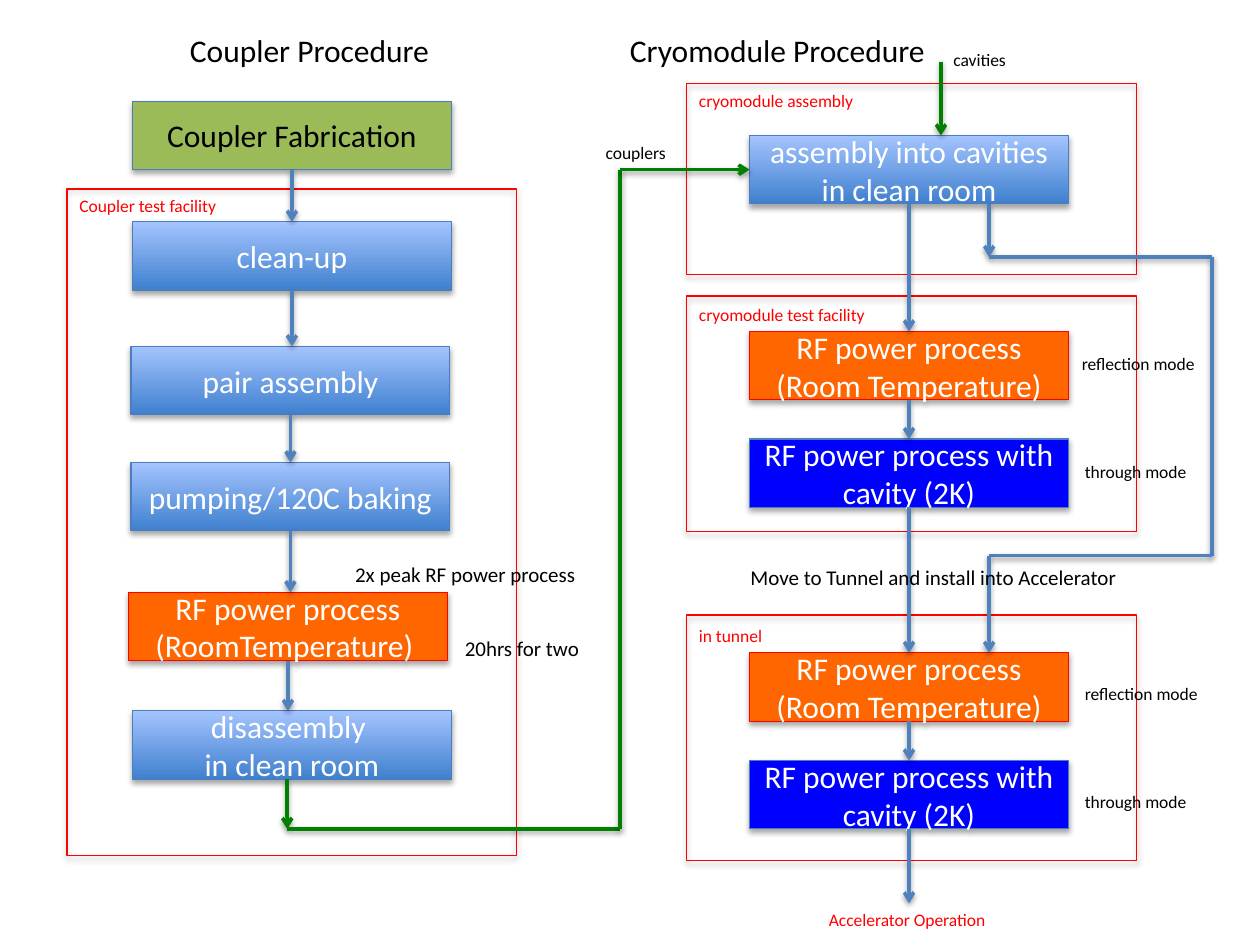
"""Builds a flow chart slide of the coupler and cryomodule procedures."""
from dataclasses import dataclass
from itertools import pairwise

from pptx import Presentation
from pptx.dml.color import RGBColor
from pptx.enum import shapes, text
from pptx.oxml import parse_xml
from pptx.oxml.ns import nsdecls, qn
from pptx.util import Cm, Pt


@dataclass(frozen=True)
class Theme:
    font: str = "Calibri"
    heading: int = 18
    note: int = 12
    tag: int = 10
    black: str = "000000"
    white: str = "FFFFFF"
    red: str = "FF0000"
    green: str = "008000"
    olive: str = "9BBB59"
    orange: str = "FF6600"
    blue: str = "0000FF"
    arrow: str = "4F81BD"
    outline: str = "4B7EBC"
    gradient: tuple[str, str] = ("3F80CE", "A4C4FF")
    outline_width: float = 0.75
    arrow_width: float = 2


THEME = Theme()
STEP_WIDTH, STEP_HEIGHT, FRAME_WIDTH = 6.43, 1.38, 9.07
LEFT_FRAME, RIGHT_FRAME, RIGHT_STEP = 1.35, 13.84, 15.11


@dataclass(frozen=True)
class Frame:
    left: float
    top: float
    height: float


@dataclass(frozen=True)
class Step:
    left: float
    top: float
    words: str
    fill: str | None = None
    outline: str = THEME.outline
    color: str = THEME.white

    @property
    def center(self) -> float:
        return self.left + STEP_WIDTH / 2

    @property
    def bottom(self) -> float:
        return self.top + STEP_HEIGHT


@dataclass(frozen=True)
class Label:
    left: float
    top: float
    width: float
    words: str
    size: int = THEME.tag
    color: str = THEME.black


@dataclass(frozen=True)
class Route:
    points: tuple[tuple[float, float], ...]
    color: str = THEME.arrow
    arrow_segments: tuple[int, ...] = (0,)


def rf_steps(top: float) -> list[Step]:
    """Return the warm and cold RF steps of one facility."""
    return [
        Step(RIGHT_STEP, top, "RF power process\n(Room Temperature)", THEME.orange, THEME.red),
        Step(RIGHT_STEP, top + 2.17, "RF power process with cavity (2K)", THEME.blue),
    ]


FRAMES = [
    Frame(RIGHT_FRAME, 5.97, 4.75),
    Frame(RIGHT_FRAME, 12.4, 4.95),
    Frame(RIGHT_FRAME, 1.68, 3.86),
    Frame(LEFT_FRAME, 3.81, 13.44),
]
COUPLER_STEPS = [
    Step(2.67, 2.04, "Coupler Fabrication", THEME.olive, color=THEME.black),
    Step(2.67, 4.47, "clean-up"),
    Step(2.64, 6.98, "pair assembly"),
    Step(2.64, 9.32, "pumping/120C baking"),
    Step(2.59, 11.94, "RF power process (RoomTemperature) ", THEME.orange, THEME.red),
    Step(2.67, 14.33, "disassembly \nin clean room"),
]
CRYOMODULE_STEPS = [
    Step(RIGHT_STEP, 2.73, "assembly into cavities\nin clean room"),
    *rf_steps(6.68),
    *rf_steps(13.16),
]
LABELS = [
    Label(3.58, 0.51, 5.41, "Coupler Procedure", THEME.heading),
    Label(12.45, 0.51, 6.55, "Cryomodule Procedure", THEME.heading),
    Label(9.12, 12.68, 2.87, "20hrs for two", THEME.note),
    Label(6.91, 11.2, 5.03, "2x peak RF power process", THEME.note),
    Label(14.88, 11.25, 8.03, "Move to Tunnel and install into Accelerator", THEME.note),
    Label(LEFT_FRAME, 3.81, 3.33, "Coupler test facility", color=THEME.red),
    Label(RIGHT_FRAME, 1.68, 3.68, "cryomodule assembly", color=THEME.red),
    Label(RIGHT_FRAME, 6, 3.94, "cryomodule test facility", color=THEME.red),
    Label(RIGHT_FRAME, 12.48, 1.8, "in tunnel", color=THEME.red),
    Label(16.46, 18.21, 3.73, "Accelerator Operation", color=THEME.red),
    Label(21.56, 6.99, 2.82, "reflection mode"),
    Label(21.62, 9.17, 2.59, "through mode"),
    Label(21.62, 13.64, 2.82, "reflection mode"),
    Label(21.62, 15.83, 2.59, "through mode"),
    Label(18.97, 0.86, 1.6, "cavities"),
    Label(11.96, 2.73, 1.75, "couplers"),
]
ROUTES = [
    Route(((5.79, 15.71), (5.79, 16.71), (12.5, 16.71), (12.5, 3.42), (RIGHT_STEP, 3.42)),
          THEME.green, (0, 3)),
    Route(((19.94, 4.11), (19.94, 5.18), (24.43, 5.18), (24.43, 11.2), (19.94, 11.2),
           (19.94, 13.16)), arrow_segments=(0, 4)),
    Route(((18.97, 1.24), (18.97, 2.73)), THEME.green),
    Route(((CRYOMODULE_STEPS[-1].center, CRYOMODULE_STEPS[-1].bottom),
           (CRYOMODULE_STEPS[-1].center, 18.21))),
]


def add_shadow(shape, distance: int, opacity: int) -> None:
    """Give a shape or connector a soft shadow below it."""
    shape._element.spPr.append(parse_xml(
        f'<a:effectLst {nsdecls("a")}><a:outerShdw blurRad="40000" dist="{distance}" '
        f'dir="5400000" rotWithShape="0"><a:srgbClr val="000000">'
        f'<a:alpha val="{opacity}"/></a:srgbClr></a:outerShdw></a:effectLst>'))


def write(shape, words: str, size: int, color: str, alignment) -> None:
    """Set the text of a shape and format its runs."""
    shape.text_frame.text = words
    for paragraph in shape.text_frame.paragraphs:
        paragraph.alignment = alignment
        for run in paragraph.runs:
            run.font.name = THEME.font
            run.font.size = Pt(size)
            run.font.color.rgb = RGBColor.from_string(color)


def add_rectangle(slide, left: float, top: float, width: float, height: float, outline: str):
    """Add an outlined rectangle."""
    shape = slide.shapes.add_shape(
        shapes.MSO_SHAPE.RECTANGLE, Cm(left), Cm(top), Cm(width), Cm(height))
    shape.line.color.rgb = RGBColor.from_string(outline)
    shape.line.width = Pt(THEME.outline_width)
    return shape


def add_frame(slide, frame: Frame) -> None:
    """Add the red outline of a facility."""
    shape = add_rectangle(slide, frame.left, frame.top, FRAME_WIDTH, frame.height, THEME.red)
    shape.fill.background()
    add_shadow(shape, 23000, 35000)


def add_step(slide, step: Step) -> None:
    """Add a process step, with a gradient unless it has its own fill."""
    shape = add_rectangle(slide, step.left, step.top, STEP_WIDTH, STEP_HEIGHT, step.outline)
    if step.fill:
        shape.fill.solid()
        shape.fill.fore_color.rgb = RGBColor.from_string(step.fill)
    else:
        shape.fill.gradient()
        shape.fill.gradient_angle = 90
        for stop, color in zip(shape.fill.gradient_stops, THEME.gradient):
            stop.color.rgb = RGBColor.from_string(color)
    add_shadow(shape, 23000, 35000)
    shape.text_frame.vertical_anchor = text.MSO_ANCHOR.MIDDLE
    write(shape, step.words, THEME.heading, step.color, text.PP_ALIGN.CENTER)


def add_label(slide, label: Label) -> None:
    """Add a one-line label whose height follows its type size."""
    height = 0.25 + 0.043 * label.size
    shape = slide.shapes.add_textbox(Cm(label.left), Cm(label.top), Cm(label.width), Cm(height))
    shape.text_frame.word_wrap = False
    shape.text_frame.auto_size = text.MSO_AUTO_SIZE.SHAPE_TO_FIT_TEXT
    write(shape, label.words, label.size, label.color, text.PP_ALIGN.LEFT)


def add_route(slide, route: Route) -> None:
    """Add connected straight lines with arrowheads on chosen segments."""
    for index, (start, end) in enumerate(pairwise(route.points)):
        connector = slide.shapes.add_connector(
            shapes.MSO_CONNECTOR.STRAIGHT, *(Cm(value) for value in start + end))
        connector.line.color.rgb = RGBColor.from_string(route.color)
        connector.line.width = Pt(THEME.arrow_width)
        if index in route.arrow_segments:
            connector._element.spPr.find(qn("a:ln")).append(
                parse_xml(f'<a:tailEnd {nsdecls("a")} type="arrow"/>'))
        add_shadow(connector, 20000, 38000)


def main() -> None:
    """Build and save the slide."""
    presentation = Presentation()
    presentation.slide_width, presentation.slide_height = Cm(25.4), Cm(19.05)
    slide = presentation.slides.add_slide(presentation.slide_layouts[6])
    for frame in FRAMES:
        add_frame(slide, frame)
    for steps in (COUPLER_STEPS, CRYOMODULE_STEPS):
        for step in steps:
            add_step(slide, step)
        for upper, lower in pairwise(steps):
            add_route(slide, Route(((upper.center, upper.bottom), (upper.center, lower.top))))
    for route in ROUTES:
        add_route(slide, route)
    for label in LABELS:
        add_label(slide, label)
    presentation.save("out.pptx")


if __name__ == "__main__":
    main()
